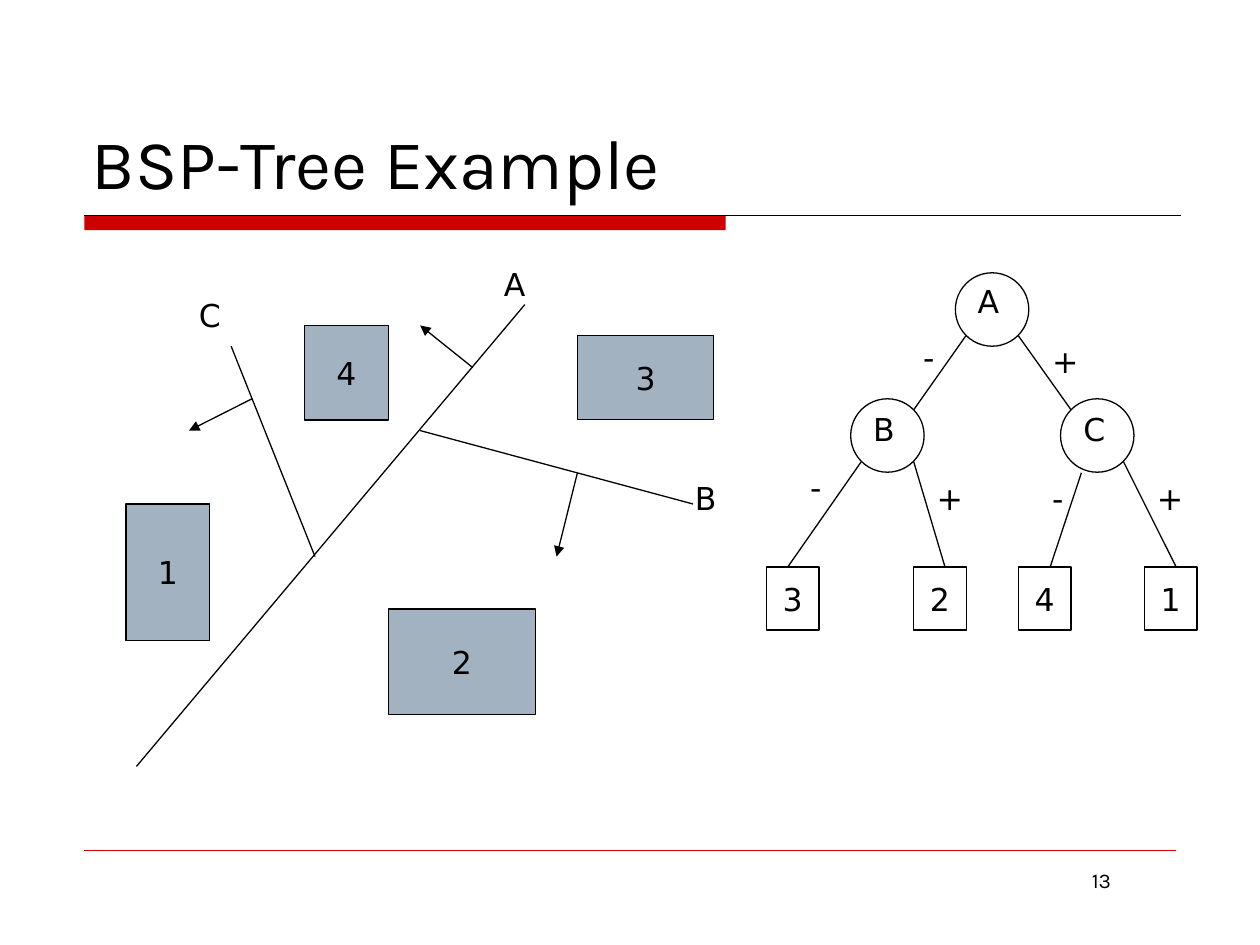
"""Build the BSP-tree example slide: a partitioned plane beside its tree."""
from dataclasses import dataclass

from lxml import etree
from pptx import Presentation
from pptx.dml.color import RGBColor
from pptx.enum.shapes import MSO_CONNECTOR, MSO_SHAPE
from pptx.enum.text import MSO_ANCHOR, MSO_AUTO_SIZE, PP_ALIGN
from pptx.oxml.ns import qn
from pptx.util import Cm, Pt

RECT, OVAL = MSO_SHAPE.RECTANGLE, MSO_SHAPE.OVAL
STRAIGHT = MSO_CONNECTOR.STRAIGHT
TOP, MIDDLE, BOTTOM = MSO_ANCHOR.TOP, MSO_ANCHOR.MIDDLE, MSO_ANCHOR.BOTTOM
LEFT, CENTER, RIGHT = PP_ALIGN.LEFT, PP_ALIGN.CENTER, PP_ALIGN.RIGHT
GROW = MSO_AUTO_SIZE.SHAPE_TO_FIT_TEXT


@dataclass(frozen=True)
class Theme:
    ink: RGBColor = RGBColor(0x00, 0x00, 0x00)
    accent: RGBColor = RGBColor(0xCC, 0x00, 0x00)
    region: RGBColor = RGBColor(0xA3, 0xB2, 0xC1)
    heading_font: str = "Karla"
    label_font: str = "DejaVu Sans"
    title: Pt = Pt(40)
    label: Pt = Pt(18)
    number: Pt = Pt(12)
    stroke: Pt = Pt(0.75)
    hairline: Pt = Pt(0.25)


theme = Theme()


def write(sp, text, size=theme.label, font=theme.label_font, align=LEFT,
          anchor=TOP, wrap=False, fit=None):
    tf = sp.text_frame
    tf.word_wrap = wrap
    tf.vertical_anchor = anchor
    if fit is not None:
        tf.auto_size = fit
    p = tf.paragraphs[0]
    p.alignment = align
    r = p.add_run()
    r.text = text
    r.font.size, r.font.name = size, font
    r.font.color.rgb = theme.ink


def draw_line(x1, y1, x2, y2, color=theme.ink, width=theme.stroke, arrow=False):
    line = s.shapes.add_connector(STRAIGHT, Cm(x1), Cm(y1), Cm(x2), Cm(y2))
    line.line.color.rgb = color
    line.line.width = width
    if arrow:
        etree.SubElement(line.line._get_or_add_ln(), qn("a:tailEnd"), type="triangle")
    etree.SubElement(line._element.spPr, qn("a:effectLst"))


prs = Presentation()
prs.slide_width, prs.slide_height = Cm(25.4), Cm(19.05)
s = prs.slides.add_slide(prs.slide_layouts[6])

bar = s.shapes.add_shape(RECT, Cm(1.7), Cm(4.34), Cm(12.93), Cm(0.3))
bar.shadow.inherit = False
bar.fill.solid()
bar.fill.fore_color.rgb = theme.accent
bar.line.fill.background()
draw_line(1.7, 4.34, 23.8, 4.34)
draw_line(1.7, 17.15, 23.7, 17.15, color=theme.accent, width=theme.hairline)

title = s.shapes.add_textbox(Cm(1.6), Cm(0.84), Cm(22.23), Cm(3.38))
write(title, "BSP-Tree Example", size=theme.title, font=theme.heading_font,
      anchor=BOTTOM, wrap=True)

partitions = [(2.75, 15.45, 10.58, 6.14), (8.47, 8.68, 13.97, 10.16),
              (6.35, 11.22, 4.66, 6.98)]
normals = [(9.53, 7.41, 8.47, 6.56), (5.08, 8.04, 3.81, 8.68),
           (11.64, 9.53, 11.22, 11.22)]
edges = [(19.47, 6.77, 18.42, 8.26), (20.53, 6.77, 21.59, 8.26),
         (17.36, 9.31, 15.88, 11.43), (18.42, 9.31, 19.05, 11.43),
         (21.8, 9.53, 21.17, 11.43), (22.65, 9.31, 23.71, 11.43)]
for ends in partitions + edges:
    draw_line(*ends)
for ends in normals:
    draw_line(*ends, arrow=True)

regions = [("2", 7.83, 12.28, 2.96, 2.12), ("4", 6.14, 6.56, 1.69, 1.91),
           ("1", 2.54, 10.16, 1.69, 2.75), ("3", 11.64, 6.77, 2.75, 1.69)]
leaves = [(name, x, 11.43, 1.06, 1.27)
          for name, x in [("3", 15.45), ("2", 18.42), ("4", 20.53), ("1", 23.07)]]
nodes = [("", x, y, 1.48, 1.48)
         for x, y in [(19.26, 5.5), (17.15, 8.04), (21.38, 8.04)]]
for kind, color, items in [(RECT, theme.region, regions), (RECT, None, leaves),
                           (OVAL, None, nodes)]:
    for name, *box in items:
        sp = s.shapes.add_shape(kind, *map(Cm, box))
        sp.shadow.inherit = False
        if color is None:
            sp.fill.background()
        else:
            sp.fill.solid()
            sp.fill.fore_color.rgb = color
        sp.line.color.rgb = theme.ink
        sp.line.width = theme.stroke
        if name:
            write(sp, name, align=CENTER, anchor=MIDDLE)

label_widths = {"A": 1.12, "B": 1.07, "C": 1.07, "-": 0.79, "+": 0.99}
labels = [("A", 9.91, 5.21), ("C", 3.76, 5.84), ("B", 13.76, 9.53),
          ("A", 19.46, 5.56), ("B", 17.35, 8.15), ("C", 21.59, 8.15),
          ("-", 18.36, 6.68), ("-", 16.08, 9.31), ("-", 20.96, 9.53),
          ("+", 20.96, 6.77), ("+", 23.07, 9.53), ("+", 18.63, 9.53)]
for text, x, y in labels:
    sp = s.shapes.add_textbox(Cm(x), Cm(y), Cm(label_widths[text]), Cm(1.27))
    write(sp, text, fit=GROW)

number = s.shapes.add_textbox(Cm(17.15), Cm(17.36), Cm(5.5), Cm(1.31))
write(number, "13", size=theme.number, font=theme.heading_font, align=RIGHT, wrap=True)

prs.save("out.pptx")
